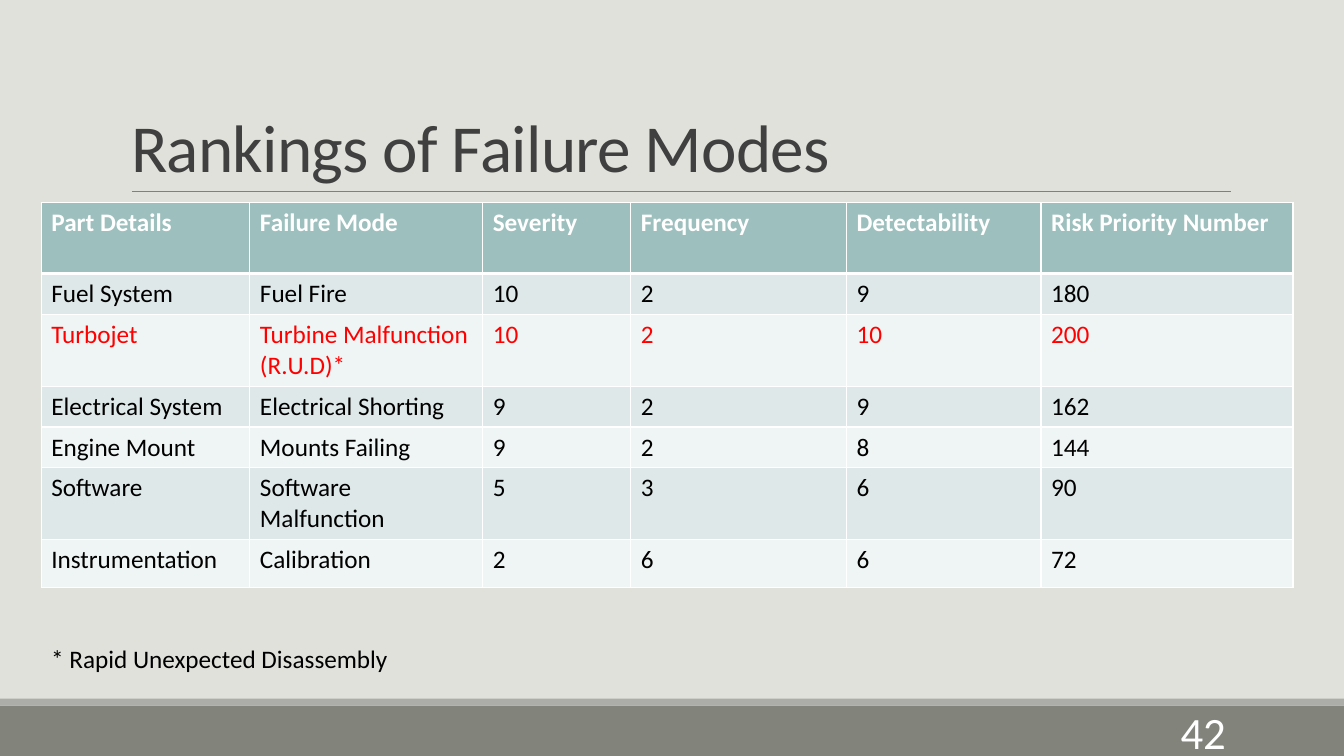
from lxml.etree import SubElement
from pptx import Presentation
from pptx.dml.color import RGBColor
from pptx.enum.shapes import MSO_CONNECTOR, MSO_SHAPE
from pptx.enum.text import MSO_ANCHOR, MSO_AUTO_SIZE, PP_ALIGN
from pptx.oxml.ns import qn
from pptx.util import Pt

BACKGROUND = RGBColor(0xE1, 0xE1, 0xDB)
BAR = RGBColor(0x82, 0x84, 0x7C)
STRIPE = RGBColor(0xAC, 0xAD, 0xA8)
RULE = RGBColor(0x80, 0x80, 0x80)
TITLE = RGBColor(0x40, 0x40, 0x40)
HEADER = RGBColor(0x9D, 0xBF, 0xBE)
BANDS = (RGBColor(0xDF, 0xE8, 0xE8), RGBColor(0xEF, 0xF4, 0xF4))
WHITE = RGBColor(0xFF, 0xFF, 0xFF)
BLACK = RGBColor(0x00, 0x00, 0x00)
RED = RGBColor(0xFF, 0x00, 0x00)

PAGE_WIDTH, PAGE_HEIGHT = 960, 540
COLUMN_WIDTHS = (149, 166.3, 105.8, 154.1, 139, 180)
ROW_HEIGHTS = (50.7, 29.2, 51.2, 29.2, 29.2, 51.2, 34.3)
HEADINGS = ("Part Details", "Failure Mode", "Severity", "Frequency",
            "Detectability", "Risk Priority Number")
FAILURES = (
    ("Fuel System", "Fuel Fire", 10, 2, 9, 180),
    ("Turbojet", "Turbine Malfunction (R.U.D)*", 10, 2, 10, 200),
    ("Electrical System", "Electrical Shorting", 9, 2, 9, 162),
    ("Engine Mount", "Mounts Failing", 9, 2, 8, 144),
    ("Software", "Software Malfunction", 5, 3, 6, 90),
    ("Instrumentation", "Calibration", 2, 6, 6, 72),
)
HIGHEST_RISK = max(failure[-1] for failure in FAILURES)


def add_span(para, text, size, color, bold=False):
    span = para.add_run()
    span.text = text
    span.font.name = "Calibri"
    span.font.size = Pt(size)
    span.font.bold = bold
    span.font.color.rgb = color
    return span


def add_label(page, text, left, top, width, height, size, color,
              align=PP_ALIGN.LEFT, anchor=MSO_ANCHOR.TOP):
    box = page.shapes.add_textbox(Pt(left), Pt(top), Pt(width), Pt(height))
    frame = box.text_frame
    frame.word_wrap = True
    frame.vertical_anchor = anchor
    para = frame.paragraphs[0]
    para.alignment = align
    add_span(para, text, size, color)


def add_bar(page, top, height, color):
    bar = page.shapes.add_shape(MSO_SHAPE.RECTANGLE, 0, Pt(top), Pt(PAGE_WIDTH), Pt(height))
    bar.shadow.inherit = False
    bar.fill.solid()
    bar.fill.fore_color.rgb = color
    bar.line.fill.background()


def add_footer(page, top, number):
    add_bar(page, top, PAGE_HEIGHT - top, BAR)
    add_bar(page, top - 5, 5, STRIPE)
    add_label(page, number, 779.8, top + 4.3, 103, 28.8, 32, WHITE,
              PP_ALIGN.RIGHT, MSO_ANCHOR.MIDDLE)


def add_heading(page, text, left, top, width, height):
    """Fill the title placeholder and underline it."""
    title = page.shapes.title
    title.left, title.top, title.width, title.height = map(Pt, (left, top, width, height))
    frame = title.text_frame
    frame.word_wrap = True
    frame.auto_size = MSO_AUTO_SIZE.NONE
    frame.vertical_anchor = MSO_ANCHOR.BOTTOM
    para = frame.paragraphs[0]
    para.alignment = PP_ALIGN.LEFT
    para.line_spacing = 0.85
    span = add_span(para, text, 48, TITLE)
    span.font._element.set("spc", "-50")

    bottom = Pt(top + height)
    rule = page.shapes.add_connector(MSO_CONNECTOR.STRAIGHT, Pt(left + 7.9), bottom,
                                     Pt(left + width + 0.7), bottom)
    rule.line.color.rgb = RULE
    rule.line.width = Pt(0.5)
    SubElement(rule._element.spPr, qn("a:effectLst"))


def set_borders(cell, top, bottom):
    """Draw white borders; top and bottom are widths in points."""
    properties = cell._tc.get_or_add_tcPr()
    for side, width in (("L", 1), ("R", 1), ("T", top), ("B", bottom)):
        border = SubElement(properties, qn(f"a:ln{side}"), w=str(Pt(width)))
        fill = SubElement(border, qn("a:solidFill"))
        SubElement(fill, qn("a:srgbClr"), val=str(WHITE))


def fill_cell(cell, text, color, background, bold=False, top=1, bottom=1):
    set_borders(cell, top, bottom)
    cell.fill.solid()
    cell.fill.fore_color.rgb = background
    add_span(cell.text_frame.paragraphs[0], text, 18, color, bold)


def add_ranking_table(page, left, top):
    frame = page.shapes.add_table(len(ROW_HEIGHTS), len(COLUMN_WIDTHS), Pt(left), Pt(top),
                                  Pt(sum(COLUMN_WIDTHS)), Pt(sum(ROW_HEIGHTS)))
    table = frame.table
    for column, width in zip(table.columns, COLUMN_WIDTHS):
        column.width = Pt(width)
    for row, height in zip(table.rows, ROW_HEIGHTS):
        row.height = Pt(height)
    for column, heading in enumerate(HEADINGS):
        fill_cell(table.cell(0, column), heading, WHITE, HEADER, bold=True, bottom=3)
    for row, failure in enumerate(FAILURES, start=1):
        color = RED if failure[-1] == HIGHEST_RISK else BLACK
        for column, value in enumerate(failure):
            fill_cell(table.cell(row, column), str(value), color, BANDS[(row - 1) % 2],
                      top=3 if row == 1 else 1)


def main():
    deck = Presentation()
    deck.slide_width, deck.slide_height = Pt(PAGE_WIDTH), Pt(PAGE_HEIGHT)
    page = deck.slides.add_slide(deck.slide_layouts[5])
    page.background.fill.solid()
    page.background.fill.fore_color.rgb = BACKGROUND
    add_footer(page, 504, "42")
    add_heading(page, "Rankings of Failure Modes", 86.4, 22.3, 792, 114.3)
    add_ranking_table(page, 29.5, 144.7)
    add_label(page, "* Rapid Unexpected Disassembly", 29.5, 455.8, 412.6, 29, 18, BLACK)
    deck.save("out.pptx")


if __name__ == "__main__":
    main()
